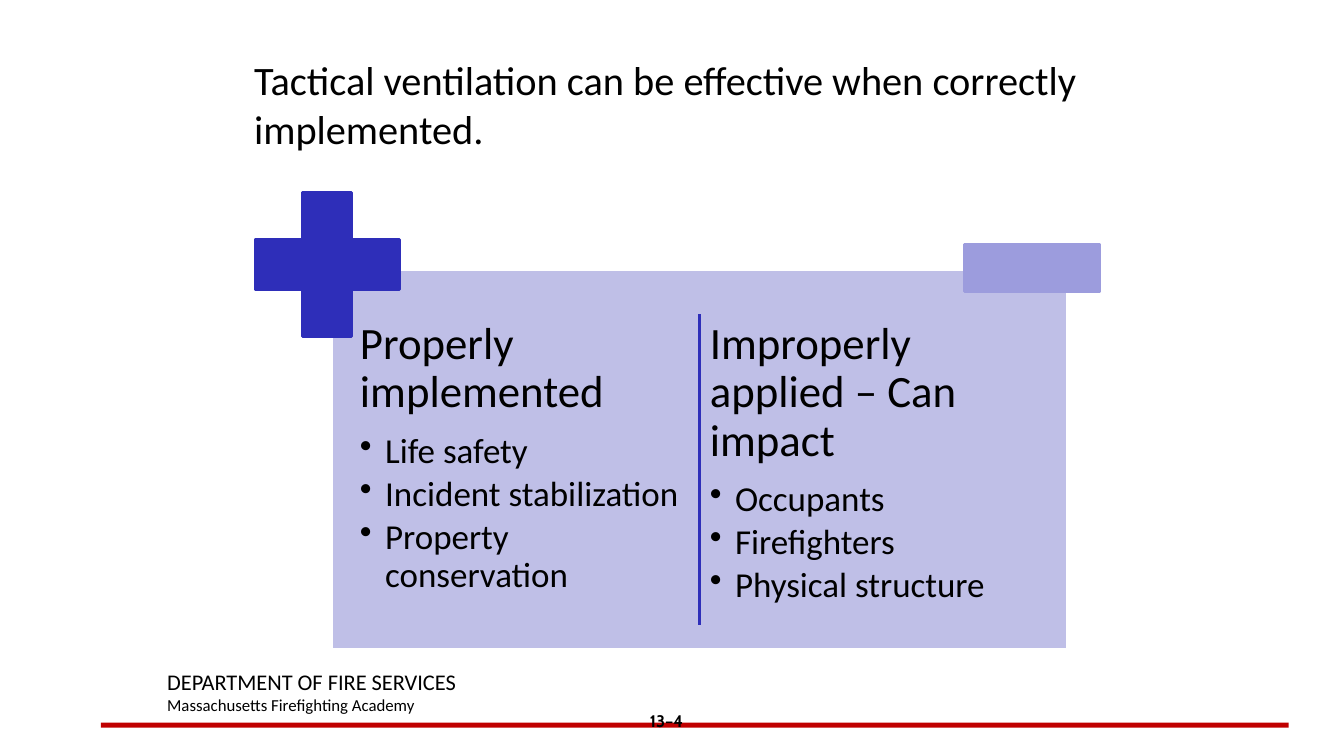
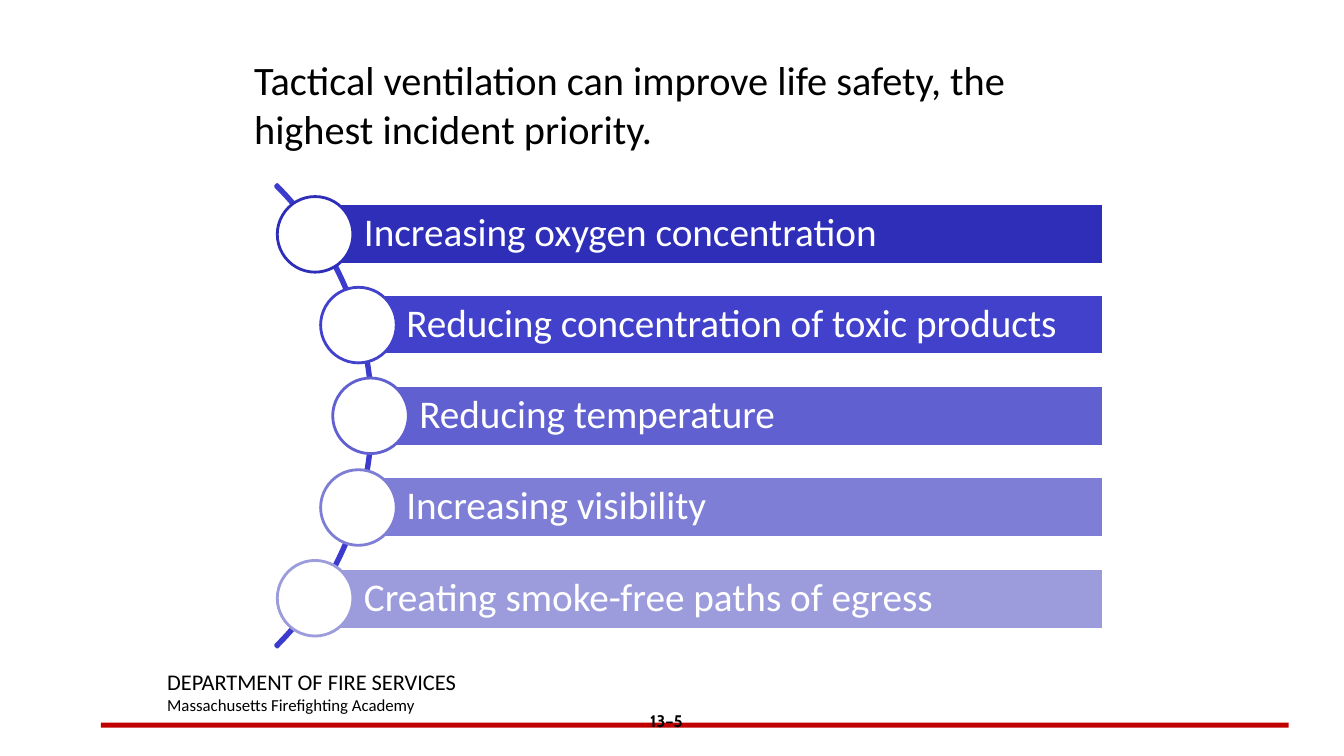
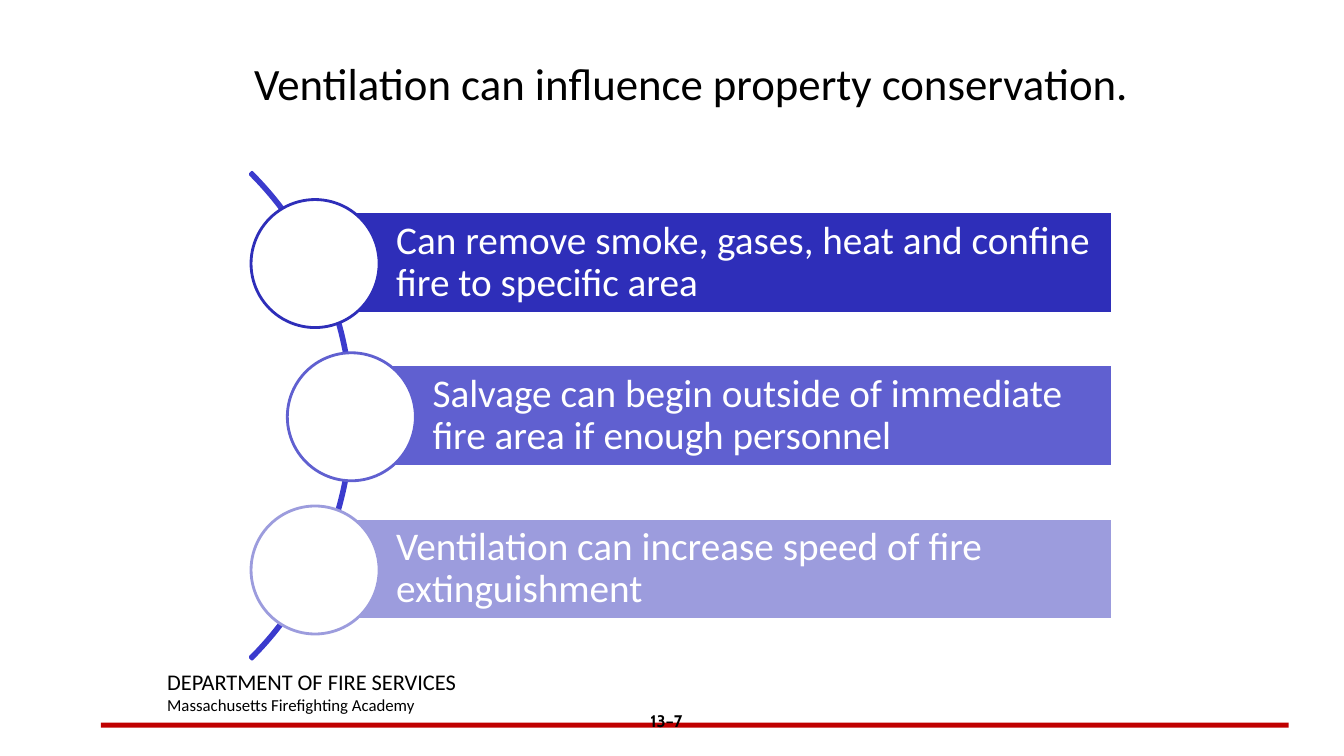
from dataclasses import dataclass
from math import sqrt

from lxml import etree
from pptx import Presentation
from pptx.dml.color import RGBColor
from pptx.enum.shapes import MSO_CONNECTOR, MSO_SHAPE
from pptx.enum.text import MSO_ANCHOR as Anchor, MSO_AUTO_SIZE, PP_ALIGN as Align
from pptx.oxml.ns import qn
from pptx.util import Inches, Pt


@dataclass(frozen=True)
class Theme:
    black: str = "000000"
    white: str = "FFFFFF"
    rule: str = "C00000"
    panel: str = "BFBFE7"
    arc: str = "3B3BCD"
    shades: tuple = ("2E2EB9", "4141CB", "6060D0", "7E7ED6", "9C9CDD")
    body_font: str = "Calibri"
    number_font: str = "Cabin"
    title: float = 28.8
    title_large: float = 32
    heading: float = 32
    bullet: float = 25
    bar: float = 28
    department: float = 16
    small: float = 12
    outline: float = 2
    tight: float = 0.9


@dataclass(frozen=True)
class Box:
    left: float
    top: float
    width: float
    height: float

    @property
    def right(self):
        return self.left + self.width

    @property
    def middle(self):
        return self.top + self.height / 2

    def inches(self):
        return [Inches(round(n, 2)) for n in (self.left, self.top, self.width, self.height)]


THEME = Theme()


def style(paragraph, size, color=THEME.black, font=THEME.body_font, bold=False, align=Align.LEFT):
    paragraph.alignment = align
    paragraph.font.size = Pt(size)
    paragraph.font.name = font
    paragraph.font.bold = bold
    paragraph.font.color.rgb = RGBColor.from_string(color)


def set_insets(frame, left, others):
    frame.margin_left = Inches(round(left, 2))
    frame.margin_top = frame.margin_right = frame.margin_bottom = Inches(others)


def add_figure(slide, kind, box, fill=None, outline=None):
    figure = slide.shapes.add_shape(kind, *box.inches())
    figure.shadow.inherit = False
    if fill:
        figure.fill.solid()
        figure.fill.fore_color.rgb = RGBColor.from_string(fill)
    else:
        figure.fill.background()
    if outline:
        figure.line.color.rgb = RGBColor.from_string(outline)
        figure.line.width = Pt(THEME.outline)
    else:
        figure.line.fill.background()
    return figure


def add_text_frame(slide, box):
    frame = slide.shapes.add_textbox(*box.inches()).text_frame
    frame.word_wrap = True
    return frame


def add_divider(slide, x, top, bottom, color):
    x, top, bottom = (Inches(round(n, 2)) for n in (x, top, bottom))
    divider = slide.shapes.add_connector(MSO_CONNECTOR.STRAIGHT, x, top, x, bottom)
    divider.line.color.rgb = RGBColor.from_string(color)
    divider.line.width = Pt(THEME.outline)
    etree.SubElement(divider._element.spPr, qn("a:effectLst"))


def add_bullet(paragraph, indent):
    properties = paragraph._p.get_or_add_pPr()
    properties.set("marL", str(Inches(indent)))
    properties.set("indent", str(-Inches(indent)))
    etree.SubElement(properties, qn("a:buChar")).set("char", "•")


def add_footer(slide, number):
    add_figure(slide, MSO_SHAPE.RECTANGLE, Box(1, 7.17, 11.78, 0.05), fill=THEME.rule)
    owner = add_text_frame(slide, Box(1.56, 6.58, 5.67, 0.57))
    owner.text = "DEPARTMENT OF FIRE SERVICES\nMassachusetts Firefighting Academy"
    for line, size in zip(owner.paragraphs, (THEME.department, THEME.small)):
        style(line, size)
    page = add_text_frame(slide, Box(5.22, 7, 2.78, 0.5))
    page.text = number
    style(page.paragraphs[0], THEME.small, font=THEME.number_font, bold=True, align=Align.CENTER)


def add_titled_slide(deck, title, number, title_width, title_size=THEME.title):
    slide = deck.slides.add_slide(deck.slide_layouts[5])
    heading = slide.shapes.title
    heading.left, heading.top, heading.width, heading.height = Box(2.42, 0.5, title_width, 1).inches()
    frame = heading.text_frame
    frame.text = title
    frame.word_wrap = True
    frame.auto_size = MSO_AUTO_SIZE.NONE
    frame.vertical_anchor = Anchor.TOP
    style(frame.paragraphs[0], title_size)
    add_footer(slide, number)
    return slide


def add_outcome_column(slide, box, heading, outcomes):
    frame = add_text_frame(slide, box)
    set_insets(frame, 0.07, 0.07)
    frame.text = "\n".join([heading, *outcomes])
    for i, paragraph in enumerate(frame.paragraphs):
        size, gap = (THEME.bullet, 0.15) if i else (THEME.heading, 0.35)
        if i:
            add_bullet(paragraph, 0.25)
        paragraph.line_spacing = THEME.tight
        paragraph.space_after = Pt(round(size * gap, 2))
        style(paragraph, size)


def add_plus_minus_panel(slide, box, columns):
    """Two columns on a panel, with a plus and a minus sign on its upper corners."""
    dark, light = THEME.shades[0], THEME.shades[-1]
    add_figure(slide, MSO_SHAPE.RECTANGLE, box, THEME.panel, THEME.white)
    for i, (heading, outcomes) in enumerate(columns):
        column = Box(box.left + 0.21 + i * 3.47, box.top + 0.44, 3.39, 3.23)
        add_outcome_column(slide, column, heading, outcomes)
    plus = add_figure(slide, MSO_SHAPE.CROSS,
                      Box(box.left - 0.76, box.top - 0.76, 1.43, 1.43), dark, dark)
    plus.adjustments[0] = 0.328
    add_figure(slide, MSO_SHAPE.RECTANGLE,
               Box(box.right - 1.02, box.top - 0.24, 1.34, 0.46), light, light)
    add_divider(slide, box.left + box.width / 2, box.top + 0.45, box.top + 3.53, dark)


def add_curved_list(slide, box, diameter, benefits):
    """Bars that start from circles strung along an arc of the given diameter."""
    count = len(benefits)
    pitch = box.height / count
    bar_height = pitch * 2 / 3
    node = bar_height * 1.25
    rail = diameter / 2 - 0.02
    arc_x = box.left + node / 2 - sqrt(rail ** 2 - (pitch * (count - 1) / 2) ** 2)

    arc = add_figure(slide, MSO_SHAPE.BLOCK_ARC,
                     Box(arc_x - diameter / 2, box.middle - diameter / 2, diameter, diameter),
                     outline=THEME.arc)
    for i, adjustment in enumerate((189, 27, 0.004)):
        arc.adjustments[i] = adjustment

    for i, benefit in enumerate(benefits):
        shade = THEME.shades[i * (len(THEME.shades) - 1) // (count - 1)]
        y = box.top + pitch * (i + 0.5)
        x = arc_x + sqrt(rail ** 2 - (y - box.middle) ** 2)
        bar = add_figure(slide, MSO_SHAPE.RECTANGLE,
                         Box(x, y - bar_height / 2, box.right - x, bar_height),
                         shade, THEME.white)
        frame = bar.text_frame
        frame.text = benefit
        frame.word_wrap = True
        frame.vertical_anchor = Anchor.MIDDLE
        set_insets(frame, bar_height * 0.8, 0.08)
        frame.paragraphs[0].line_spacing = THEME.tight
        style(frame.paragraphs[0], THEME.bar, THEME.white)
        add_figure(slide, MSO_SHAPE.OVAL, Box(x - node / 2, y - node / 2, node, node),
                   THEME.white, shade)


def main():
    deck = Presentation()
    deck.slide_width, deck.slide_height = Inches(13.33), Inches(7.5)

    effects = add_titled_slide(
        deck, "Tactical ventilation can be effective when correctly implemented.", "13–4", 8.5)
    add_plus_minus_panel(effects, Box(3.29, 2.67, 7.3, 3.77), [
        ("Properly implemented",
         ["Life safety", "Incident stabilization", "Property conservation"]),
        ("Improperly applied – Can impact",
         ["Occupants", "Firefighters", "Physical structure"]),
    ])

    life_safety = add_titled_slide(
        deck, "Tactical ventilation can improve life safety, the highest incident priority.",
        "13–5", 8.63)
    add_curved_list(life_safety, Box(2.75, 1.87, 8.19, 4.52), 6.49, [
        "Increasing oxygen concentration",
        "Reducing concentration of toxic products",
        "Reducing temperature",
        "Increasing visibility",
        "Creating smoke-free paths of egress",
    ])

    conservation = add_titled_slide(
        deck, "Ventilation can influence property conservation.", "13–7", 8.97, THEME.title_large)
    add_curved_list(conservation, Box(2.49, 1.85, 8.54, 4.56), 6.83, [
        "Can remove smoke, gases, heat and confine fire to specific area",
        "Salvage can begin outside of immediate fire area if enough personnel",
        "Ventilation can increase speed of fire extinguishment",
    ])

    deck.save("out.pptx")


if __name__ == "__main__":
    main()
